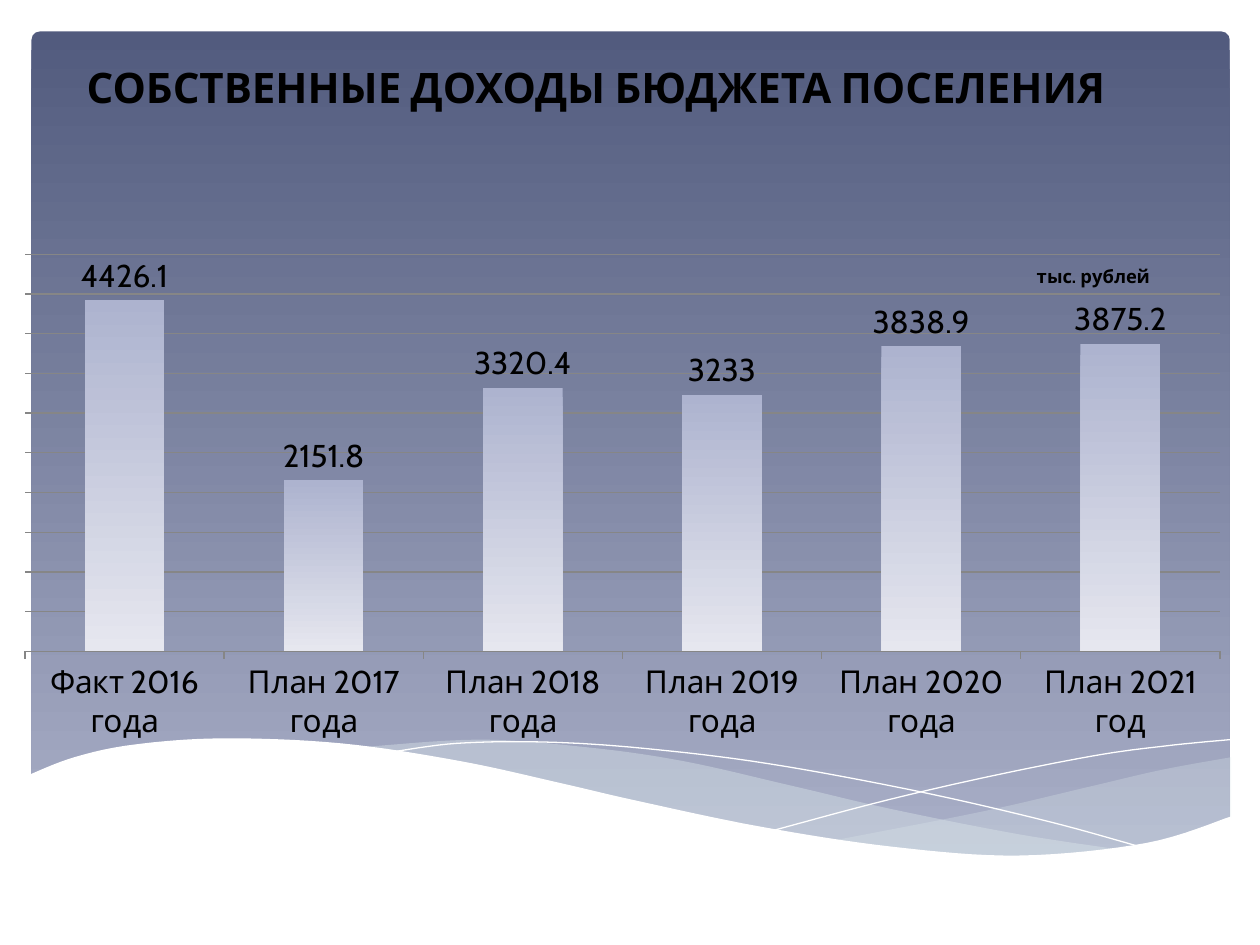
from lxml.etree import SubElement
from pptx import Presentation
from pptx.chart.data import CategoryChartData
from pptx.dml.color import RGBColor
from pptx.enum.chart import XL_CHART_TYPE, XL_LABEL_POSITION, XL_TICK_LABEL_POSITION, XL_TICK_MARK
from pptx.enum.shapes import MSO_SHAPE
from pptx.enum.text import MSO_ANCHOR, MSO_AUTO_SIZE, PP_ALIGN
from pptx.oxml import parse_xml
from pptx.oxml.ns import nsdecls, qn
from pptx.util import Inches, Pt

FONT = "Cabin"
BLACK = RGBColor(0x00, 0x00, 0x00)
WHITE = RGBColor(0xFF, 0xFF, 0xFF)
MIST = RGBColor(0xDD, 0xE9, 0xEC)
GRAY = RGBColor(0x86, 0x86, 0x86)
PANEL = (RGBColor(0x52, 0x5B, 0x7E), RGBColor(0xAA, 0xB0, 0xC8))
BARS = (RGBColor(0xAD, 0xB3, 0xCF), RGBColor(0xE6, 0xE7, 0xEF))

TITLE = "СОБСТВЕННЫЕ ДОХОДЫ БЮДЖЕТА ПОСЕЛЕНИЯ"
UNITS = "тыс. рублей"
INCOME = [
    ("Факт 2016 года", 4426.1),
    ("План 2017 года", 2151.8),
    ("План 2018 года", 3320.4),
    ("План 2019 года", 3233),
    ("План 2020 года", 3838.9),
    ("План 2021 год", 3875.2),
]

RIGHT_TOP = [(9.77, 6.01), (9.22, 6.11), (8.62, 6.25), (7.8, 6.44), (6.62, 6.67)]
RIGHT_BOTTOM = [(6.62, 6.67), (7.19, 6.74), (8.04, 6.8), (8.9, 6.74), (9.37, 6.63), (9.77, 6.49)]
LONG_TOP = [(8.94, 6.75), (8.08, 6.62), (7.07, 6.42), (6.3, 6.24), (5.42, 6.04),
            (4.65, 5.93), (3.8, 5.87), (2.87, 5.93)]
LONG_BOTTOM = [(2.87, 5.93), (3.63, 6.04), (4.5, 6.24), (5.67, 6.5), (6.66, 6.68),
               (7.49, 6.78), (8.19, 6.8), (8.94, 6.75)]
FALLING = [(3.1, 5.97), (3.63, 5.9), (4.33, 5.89), (5.11, 5.94), (6.09, 6.06),
           (7.28, 6.28), (8.32, 6.52), (9.08, 6.73)]
RISING = [(6.14, 6.59), (6.96, 6.37), (7.77, 6.18), (8.67, 6), (9.25, 5.92), (9.76, 5.87)]
FRONT = [(9.77, 6.48), (9.1, 6.69), (8.09, 6.79), (7.08, 6.72), (6.03, 6.56), (5.03, 6.35),
         (4.47, 6.22), (3.65, 6.04), (2.71, 5.9), (1.77, 5.86), (1.06, 5.91), (0.59, 6.01), (0.23, 6.15)]
FRONT_BASE = [(0.23, 7.31), (9.77, 7.31)]


def smooth(points, steps=8):
    ends = [points[0]] + points + [points[-1]]
    curve = [points[0]]
    for a, b, c, d in zip(ends, ends[1:], ends[2:], ends[3:]):
        for i in range(1, steps + 1):
            t = i / steps
            curve.append(tuple(
                q + t * (r - p) / 2 + t**2 * (2 * p - 5 * q + 4 * r - s) / 2
                + t**3 * (3 * q - p - 3 * r + s) / 2
                for p, q, r, s in zip(a, b, c, d)))
    return curve


def set_gradient(fill, colors):
    fill.gradient()
    fill.gradient_angle = 270
    for stop, color in zip(fill.gradient_stops, colors):
        stop.color.rgb = color


def add_wave(s, points, color=None, alpha=100):
    pts = [(Inches(x), Inches(y)) for x, y in points]
    builder = s.shapes.build_freeform(*pts[0], scale=1.0)
    builder.add_line_segments(pts[1:], close=color is not None)
    sp = builder.convert_to_shape()
    sp.shadow.inherit = False
    if color is None:
        sp.fill.background()
        sp.line.color.rgb = WHITE
        sp.line.width = Pt(0)
        return
    sp.fill.solid()
    sp.fill.fore_color.rgb = color
    sp.line.fill.background()
    if alpha < 100:
        clr = sp._element.spPr.find(qn("a:solidFill"))[0]
        SubElement(clr, qn("a:alpha"), val=str(alpha * 1000))


def set_layout(parent, index, x, y, w=None, h=None, inner=False):
    for old in parent.findall(qn("c:layout")):
        parent.remove(old)
    parts = ['<c:layoutTarget val="inner"/>'] if inner else []
    parts += ['<c:xMode val="edge"/><c:yMode val="edge"/>']
    parts += [f'<c:{tag} val="{val}"/>' for tag, val in zip("xywh", (x, y, w, h)) if val is not None]
    parent.insert(index, parse_xml(
        f'<c:layout {nsdecls("c")}><c:manualLayout>{"".join(parts)}</c:manualLayout></c:layout>'))


def add_background(s):
    sp = s.shapes.add_shape(MSO_SHAPE.ROUNDED_RECTANGLE, Inches(0.25), Inches(0.25), Inches(9.51), Inches(6.6))
    sp.adjustments[0] = 0.01
    sp.shadow.inherit = False
    sp.line.fill.background()
    set_gradient(sp.fill, PANEL)
    add_wave(s, smooth(RIGHT_TOP) + smooth(RIGHT_BOTTOM), MIST, 29)
    add_wave(s, smooth(LONG_TOP) + smooth(LONG_BOTTOM), MIST, 40)
    add_wave(s, smooth(FALLING))
    add_wave(s, smooth(RISING))
    add_wave(s, smooth(FRONT) + FRONT_BASE, WHITE)


def add_title(s):
    sp = s.shapes.title
    s.shapes._spTree.append(sp._element)
    sp.left, sp.top, sp.width, sp.height = (Inches(v) for v in (0.28, 0.44, 8.9, 0.5))
    tf = sp.text_frame
    tf.text = TITLE
    tf.word_wrap = True
    tf.auto_size = MSO_AUTO_SIZE.SHAPE_TO_FIT_TEXT
    tf.vertical_anchor = MSO_ANCHOR.MIDDLE
    p = tf.paragraphs[0]
    p.alignment = PP_ALIGN.CENTER
    font = p.runs[0].font
    font.name, font.size, font.bold = FONT, Pt(24), True
    font.color.rgb = BLACK


def add_income_chart(s):
    data = CategoryChartData()
    data.categories = [name for name, _ in INCOME]
    data.add_series("Series 1", [value for _, value in INCOME])
    chart = s.shapes.add_chart(XL_CHART_TYPE.COLUMN_CLUSTERED, Inches(0), Inches(1.53),
                               Inches(9.88), Inches(4.44), data).chart
    chart.font.name, chart.font.size = FONT, Pt(18)
    chart.font.color.rgb = BLACK
    chart.has_legend = False

    chart.has_title = True
    tf = chart.chart_title.text_frame
    tf.text = UNITS
    font = tf.paragraphs[0].runs[0].font
    font.name, font.size, font.bold = FONT, Pt(10.5), True
    font.color.rgb = BLACK
    chart.chart_title.include_in_layout = False
    set_layout(chart.chart_title._element, 1, 0.83, 0.12)
    set_layout(chart._chartSpace.chart.plotArea, 0, 0.02, 0.11, 0.96, 0.71, inner=True)

    plot = chart.plots[0]
    plot.gap_width = 150
    plot.vary_by_categories = False
    set_gradient(plot.series[0].format.fill, BARS)
    plot.has_data_labels = True
    labels = plot.data_labels
    labels.show_value = True
    labels.position = XL_LABEL_POSITION.OUTSIDE_END
    labels.number_format, labels.number_format_is_linked = "General", False

    axis = chart.value_axis
    axis.minimum_scale, axis.maximum_scale, axis.major_unit = 0, 5000, 500
    axis.tick_label_position = XL_TICK_LABEL_POSITION.NONE
    axis.visible = False
    axis.has_major_gridlines = True
    axis.major_gridlines.format.line.color.rgb = GRAY
    axis.major_gridlines.format.line.width = Pt(0.75)
    cat = chart.category_axis
    cat.major_tick_mark = XL_TICK_MARK.OUTSIDE
    cat.format.line.color.rgb = GRAY
    cat.format.line.width = Pt(0.75)


def main():
    prs = Presentation()
    prs.slide_width, prs.slide_height = Inches(10), Inches(7.5)
    s = prs.slides.add_slide(prs.slide_layouts[5])
    add_background(s)
    add_title(s)
    add_income_chart(s)
    prs.save("out.pptx")


if __name__ == "__main__":
    main()
